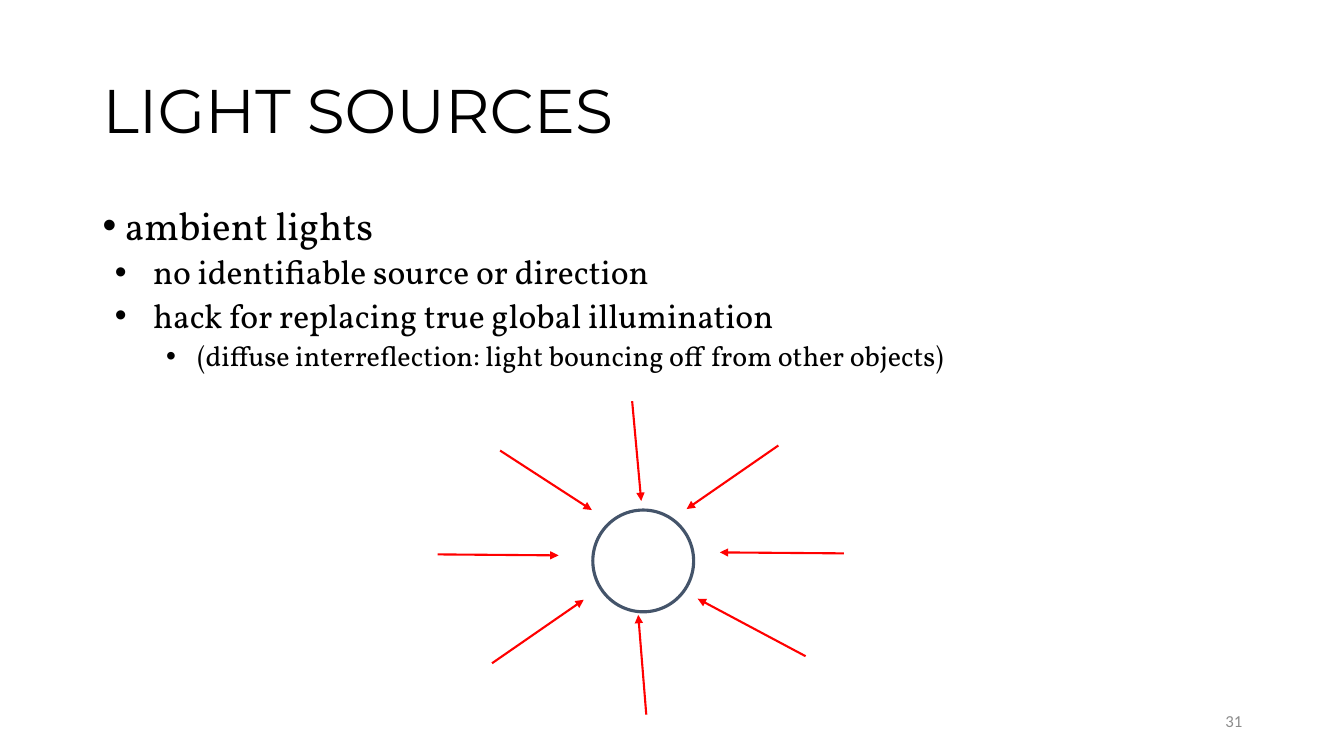
from dataclasses import dataclass

from lxml import etree
from pptx import Presentation
from pptx.dml.color import RGBColor
from pptx.enum.shapes import MSO_CONNECTOR, MSO_SHAPE
from pptx.enum.text import MSO_ANCHOR, PP_ALIGN
from pptx.oxml.ns import qn
from pptx.util import Inches, Pt

LINE = MSO_CONNECTOR.STRAIGHT
OVAL = MSO_SHAPE.OVAL
TOP, MIDDLE = MSO_ANCHOR.TOP, MSO_ANCHOR.MIDDLE
LEFT, RIGHT = PP_ALIGN.LEFT, PP_ALIGN.RIGHT


@dataclass(frozen=True)
class Theme:
    ink: str = "000000"
    gray: str = "8C8C8C"
    ray: str = "FF0000"
    rim: str = "44546A"
    head: str = "Montserrat"
    body: str = "Vollkorn"
    small: str = "Calibri"
    title: int = 44
    note: int = 12
    levels: tuple = (28, 24, 20)
    margins: tuple = (0.22, 0.5, 0.94)
    hangs: tuple = (0.22, 0.38, 0.31)
    gaps: tuple = (10, 5, 5)


def apply(target, values):
    for name, value in values.items():
        setattr(target, name, value)


class Canvas:
    def __init__(self, slide, theme):
        self.slide = slide
        self.theme = theme

    def frame(self, box, anchor):
        shape = self.slide.shapes.add_textbox(*map(Inches, box))
        apply(shape.text_frame, {"word_wrap": True, "vertical_anchor": anchor})
        return shape.text_frame

    def fill_line(self, para, text, font, size, color, **format):
        """Put one styled run of text into a paragraph."""
        apply(para, format)
        run = para.add_run()
        run.text = text
        apply(run.font, {"name": font, "size": Pt(size)})
        run.font.color.rgb = RGBColor.from_string(color)

    def label(self, box, text, font, size, color, **format):
        para = self.frame(box, MIDDLE).paragraphs[0]
        self.fill_line(para, text, font, size, color, **format)

    def bullets(self, box, items):
        """Set (level, text) pairs as a bulleted outline."""
        look = self.theme
        frame = self.frame(box, TOP)
        for index, (level, text) in enumerate(items):
            para = frame.add_paragraph() if index else frame.paragraphs[0]
            self.fill_line(para, text, look.body, look.levels[level], look.ink,
                           level=level, line_spacing=0.9,
                           space_before=Pt(look.gaps[level]))
            props = para._p.get_or_add_pPr()
            props.set("marL", str(Inches(look.margins[level])))
            props.set("indent", str(-Inches(look.hangs[level])))
            etree.SubElement(props, qn("a:buFont"), typeface="Arial")
            etree.SubElement(props, qn("a:buChar"), char="•")

    def stroke(self, line, color, width):
        line.color.rgb = RGBColor.from_string(color)
        line.width = Pt(width)

    def ring(self, box):
        shape = self.slide.shapes.add_shape(OVAL, *map(Inches, box))
        shape.shadow.inherit = False
        shape.fill.background()
        self.stroke(shape.line, self.theme.rim, 2.25)

    def arrow(self, start, end):
        link = self.slide.shapes.add_connector(
            LINE, *map(Inches, start + end))
        self.stroke(link.line, self.theme.ray, 1.5)
        etree.SubElement(link.line._get_or_add_ln(), qn("a:tailEnd"),
                         type="triangle")
        etree.SubElement(link._element.spPr, qn("a:effectLst"))


OUTLINE = (
    (0, "ambient lights"),
    (1, "no identifiable source or direction"),
    (1, "hack for replacing true global illumination"),
    (2, "(diffuse interreflection: light bouncing off from other objects)"),
)
# Each ray runs from its outer end to the tip beside the ring.
RAYS = (
    ((4.34, 5.5), (5.54, 5.51)),
    ((8.37, 5.49), (7.14, 5.48)),
    ((7.99, 6.51), (6.92, 5.94)),
    ((4.88, 6.58), (5.79, 5.95)),
    ((6.41, 7.09), (6.33, 6.1)),
    ((7.72, 4.42), (6.81, 5.05)),
    ((4.96, 4.47), (5.87, 5.06)),
    ((6.27, 3.98), (6.36, 4.97)),
)


def main():
    deck = Presentation()
    apply(deck, {"slide_width": Inches(13.33), "slide_height": Inches(7.5)})
    look = Theme()
    page = Canvas(deck.slides.add_slide(deck.slide_layouts[6]), look)
    page.label((9.42, 6.95, 3, 0.4), "31", look.small, look.note, look.gray,
               alignment=RIGHT)
    page.label((0.92, 0.4, 11.5, 1.45), "LIGHT SOURCES", look.head,
               look.title, look.ink, alignment=LEFT, line_spacing=0.9)
    page.bullets((0.92, 2, 11.5, 4.76), OUTLINE)
    page.ring((5.88, 5.06, 1, 1.01))
    for start, end in RAYS:
        page.arrow(start, end)
    deck.save("out.pptx")


if __name__ == "__main__":
    main()
